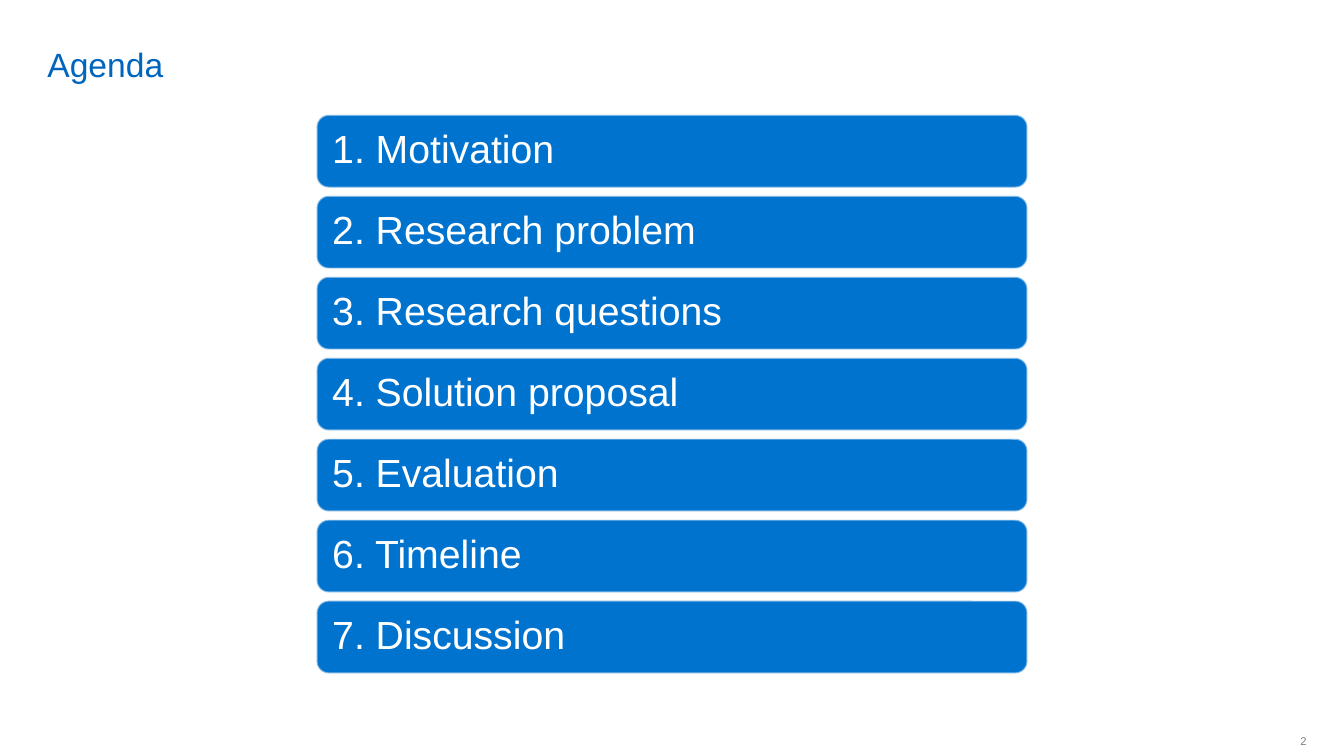
from lxml import etree
from pptx import Presentation
from pptx.dml.color import RGBColor
from pptx.enum import shapes, text
from pptx.oxml.ns import qn
from pptx.util import Inches, Pt

TITLE = "Agenda"
PAGE = "2"
TOPICS = ["Motivation", "Research problem", "Research questions",
          "Solution proposal", "Evaluation", "Timeline", "Discussion"]

THEME = {
    "font": "Arial",
    "title": (24, "0065BD"),
    "topic": (28, "FFFFFF"),
    "page": (8, "808080"),
    "bar": "0073CF",
    "outline": "F9F9F9",
}

BAR_LEFT, BAR_WIDTH, BAR_HEIGHT = 3.14, 7.05, 0.72
FIRST_TOP, LAST_TOP = 1.14, 5.96
PITCH = (LAST_TOP - FIRST_TOP) / (len(TOPICS) - 1)


def write(sp, words, style, align, anchor, margins, wrap=True):
    """Fill a shape with one paragraph; margins are left, top, right, bottom."""
    tf = sp.text_frame
    tf.text = words
    tf.auto_size = text.MSO_AUTO_SIZE.NONE
    tf.word_wrap = wrap
    tf.vertical_anchor = anchor
    (tf.margin_left, tf.margin_top,
     tf.margin_right, tf.margin_bottom) = map(Inches, margins)
    p = tf.paragraphs[0]
    p.alignment = align
    size, color = THEME[style]
    font = p.runs[0].font
    font.name, font.size = THEME["font"], Pt(size)
    font.color.rgb = RGBColor.from_string(color)
    return p


def add_bar(s, number, topic):
    top = FIRST_TOP + (number - 1) * PITCH
    sp = s.shapes.add_shape(
        shapes.MSO_SHAPE.ROUNDED_RECTANGLE, Inches(BAR_LEFT), Inches(top),
        Inches(BAR_WIDTH), Inches(BAR_HEIGHT))
    sp.shadow.inherit = False
    sp.fill.solid()
    sp.fill.fore_color.rgb = RGBColor.from_string(THEME["bar"])
    sp.line.width = Pt(1.35)
    sp.line.color.rgb = RGBColor.from_string(THEME["outline"])
    outline = sp.line.fill._xPr.find(".//" + qn("a:srgbClr"))
    etree.SubElement(outline, qn("a:alpha"), val="50000")
    p = write(sp, f"{number}. {topic}", "topic", text.PP_ALIGN.LEFT,
              text.MSO_ANCHOR.MIDDLE, (0.12,) * 4)
    p.line_spacing = 0.9


def main():
    prs = Presentation()
    prs.slide_width, prs.slide_height = Inches(13.33), Inches(7.5)
    s = prs.slides.add_slide(prs.slide_layouts[5])

    title = s.shapes.title
    title.left, title.top = Inches(0.37), Inches(0.05)
    title.width, title.height = Inches(11.58), Inches(0.79)
    write(title, TITLE, "title", text.PP_ALIGN.LEFT,
          text.MSO_ANCHOR.BOTTOM, (0.1, 0, 0.1, 0))

    for number, topic in enumerate(TOPICS, 1):
        add_bar(s, number, topic)

    page = s.shapes.add_textbox(Inches(12.6), Inches(7.19),
                                Inches(0.36), Inches(0.32))
    write(page, PAGE, "page", text.PP_ALIGN.RIGHT,
          text.MSO_ANCHOR.MIDDLE, (0.1, 0.05, 0, 0.05), wrap=False)

    prs.save("out.pptx")


if __name__ == "__main__":
    main()
